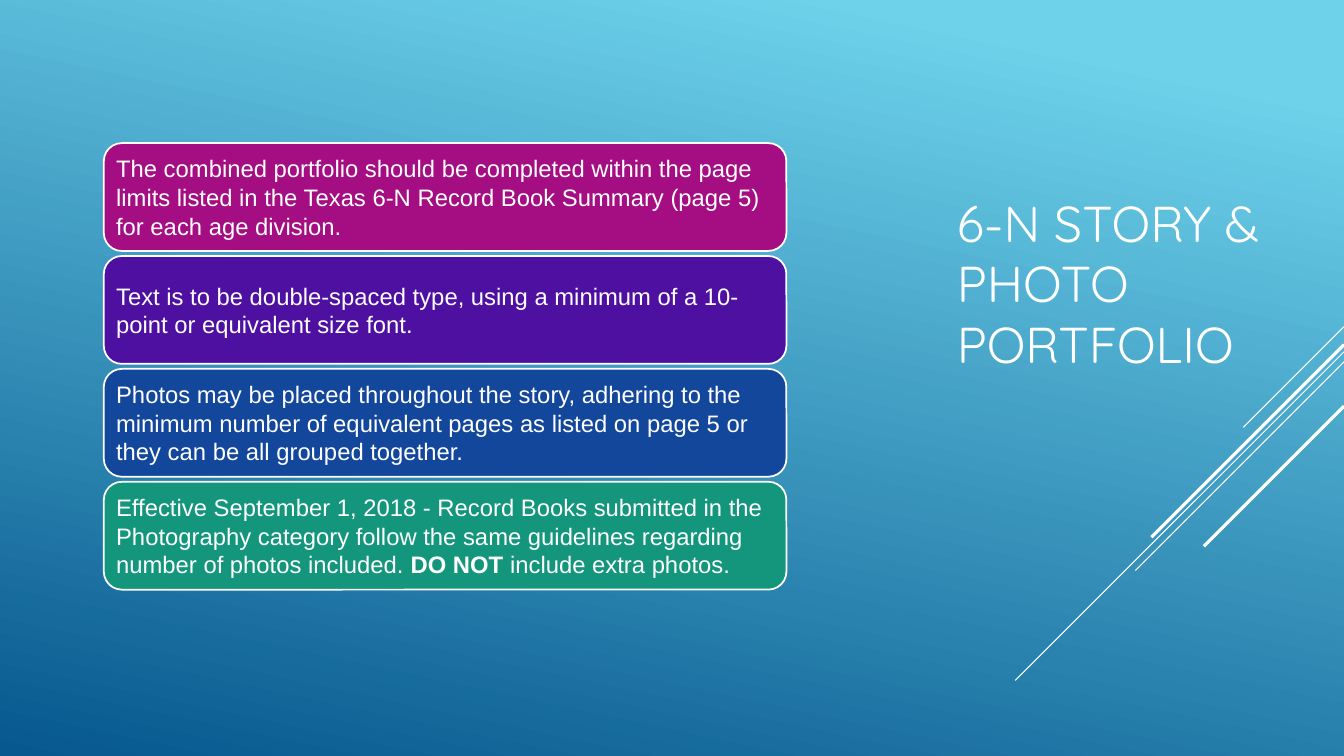
"""Build the 6-N story and photo portfolio slide."""
from dataclasses import dataclass

from lxml import etree
from pptx import Presentation
from pptx import util as u
from pptx.dml.color import RGBColor
from pptx.enum import shapes, text
from pptx.oxml import ns
from pptx.slide import Slide
from pptx.text.text import TextFrame


@dataclass(frozen=True)
class Theme:
    white: str = "FFFFFF"
    sky: str = "6ED2EB"
    sea: str = "06588E"
    magenta: str = "A50E82"
    violet: str = "4D10A0"
    blue: str = "12479B"
    green: str = "14967C"
    title_font: str = "Quicksand"
    body_font: str = "Arial"
    title_size: float = 36
    body_size: float = 17


@dataclass(frozen=True)
class Ray:
    top: float
    reach: float
    weight: float


@dataclass(frozen=True)
class Card:
    fill: str
    before: str
    strong: str = ""
    after: str = ""


THEME = Theme()
SLIDE_WIDTH, SLIDE_HEIGHT = 13.33, 7.5
CARD_LEFT, CARD_TOP, CARD_WIDTH, CARD_HEIGHT = 1.03, 1.42, 6.77, 1.07
CARD_PITCH = 1.12
CARD_INSET = 0.07

RAYS = [
    Ray(3.24, 1.0, 0.75),
    Ray(3.49, 3.26, 0.75),
    Ray(3.59, 2.07, 0.75),
    Ray(3.42, 1.91, 2.25),
    Ray(4.03, 1.39, 2.25),
]

CARDS = [
    Card(THEME.magenta, "The combined portfolio should be completed within the page limits listed "
         "in the Texas 6-N Record Book Summary (page 5) for each age division."),
    Card(THEME.violet, "Text is to be double-spaced type, using a minimum of a 10-point or "
         "equivalent size font."),
    Card(THEME.blue, "Photos may be placed throughout the story, adhering to the minimum number of "
         "equivalent pages as listed on page 5 or they can be all grouped together."),
    Card(THEME.green, "Effective September 1, 2018 - Record Books submitted in the Photography "
         "category follow the same guidelines regarding number of photos included. ",
         "DO NOT ", "include extra photos."),
]


def rgb(value: str) -> RGBColor:
    return RGBColor.from_string(value)


def add_text(frame: TextFrame, words: str, *, font: str, size: float,
             bold: bool = False) -> None:
    frame.word_wrap = True
    frame.auto_size = text.MSO_AUTO_SIZE.NONE
    frame.vertical_anchor = text.MSO_ANCHOR.MIDDLE
    para = frame.paragraphs[0]
    para.alignment = text.PP_ALIGN.LEFT
    span = para.add_run()
    span.text = words
    span.font.name = font
    span.font.size = u.Pt(size)
    span.font.bold = bold
    span.font.color.rgb = rgb(THEME.white)


def paint_background(page: Slide) -> None:
    fill = page.background.fill
    fill.gradient()
    fill.gradient_angle = 258
    stops = [(0.1, THEME.sky), (1.0, THEME.sea)]
    for stop, (position, color) in zip(fill.gradient_stops, stops):
        stop.position = position
        stop.color.rgb = rgb(color)


def draw_ray(page: Slide, ray: Ray) -> None:
    line = page.shapes.add_connector(
        shapes.MSO_CONNECTOR.STRAIGHT,
        u.Inches(SLIDE_WIDTH), u.Inches(ray.top),
        u.Inches(SLIDE_WIDTH - ray.reach), u.Inches(ray.top + ray.reach))
    line.line.color.rgb = rgb(THEME.white)
    line.line.width = u.Pt(ray.weight)
    etree.SubElement(line.element.spPr, ns.qn("a:effectLst"))


def draw_card(page: Slide, card: Card, top: float) -> None:
    box = page.shapes.add_shape(
        shapes.MSO_SHAPE.ROUNDED_RECTANGLE, u.Inches(CARD_LEFT), u.Inches(top),
        u.Inches(CARD_WIDTH), u.Inches(CARD_HEIGHT))
    box.shadow.inherit = False
    box.fill.solid()
    box.fill.fore_color.rgb = rgb(card.fill)
    box.line.color.rgb = rgb(THEME.white)
    box.line.width = u.Pt(1.25)
    frame = box.text_frame
    frame.margin_left = frame.margin_right = u.Inches(CARD_INSET)
    frame.margin_top = frame.margin_bottom = u.Inches(CARD_INSET)
    for words, bold in [(card.before, False), (card.strong, True), (card.after, False)]:
        if words:
            add_text(frame, words, font=THEME.body_font, size=THEME.body_size, bold=bold)


def place_title(page: Slide) -> None:
    title = page.shapes.title
    title.left, title.top = u.Inches(9.39), u.Inches(1.03)
    title.width, title.height = u.Inches(3.33), u.Inches(3.55)
    add_text(title.text_frame, "6-N STORY & PHOTO PORTFOLIO",
             font=THEME.title_font, size=THEME.title_size)


def main() -> None:
    deck = Presentation()
    deck.slide_width, deck.slide_height = u.Inches(SLIDE_WIDTH), u.Inches(SLIDE_HEIGHT)
    page = deck.slides.add_slide(deck.slide_layouts.get_by_name("Title Only"))
    paint_background(page)
    for ray in RAYS:
        draw_ray(page, ray)
    place_title(page)
    for row, card in enumerate(CARDS):
        draw_card(page, card, CARD_TOP + row * CARD_PITCH)
    deck.save("out.pptx")


if __name__ == "__main__":
    main()
